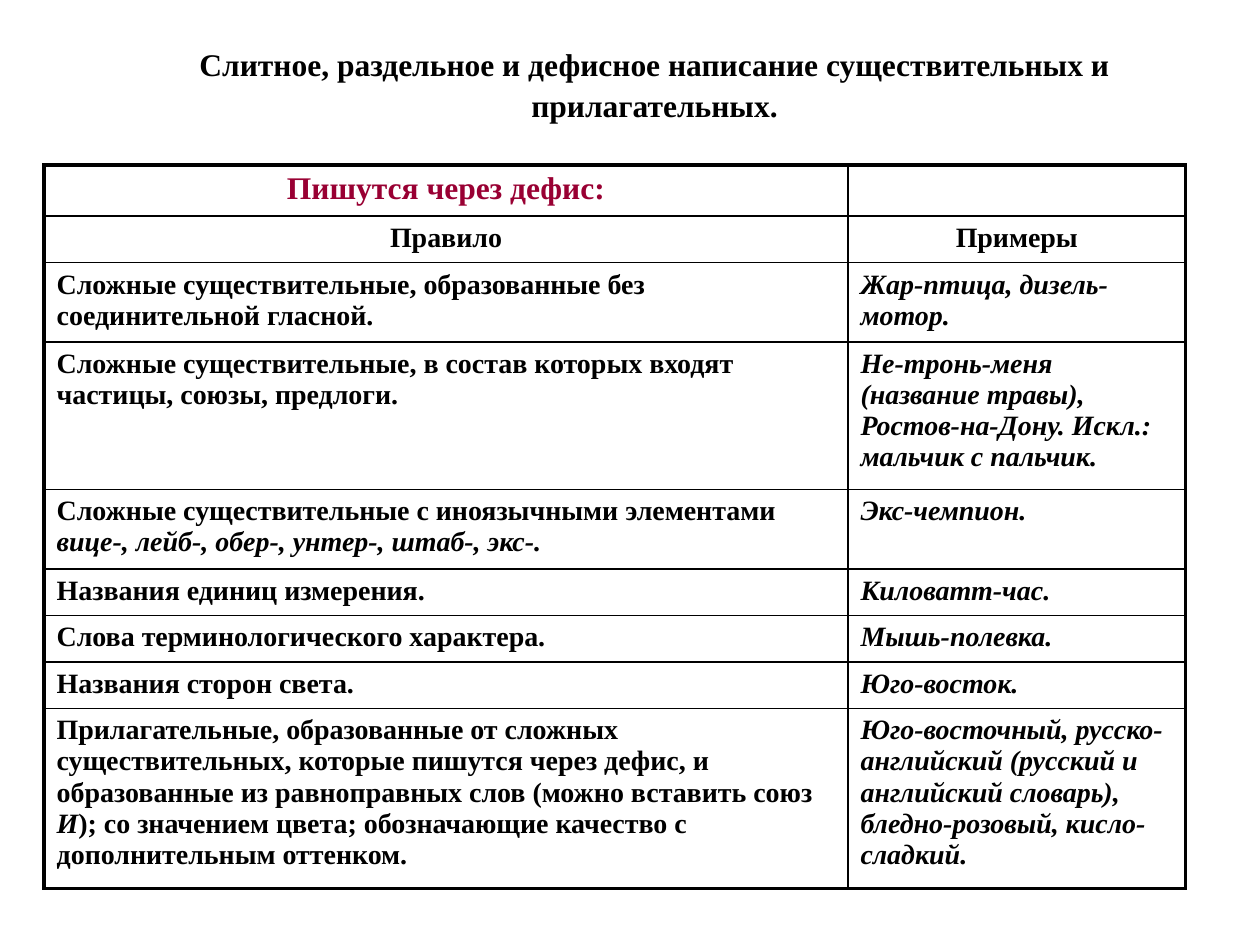
import pptx
import pptx.util
import pptx.dml.color
import pptx.enum.text
import pptx.oxml
import pptx.oxml.ns
from pptx.util import Inches

FONT = "Times New Roman"
COLORS = {"ink": "000000", "heading": "990033"}
TITLE = "Слитное, раздельное и дефисное написание существительных и прилагательных."
HEADING = "Пишутся через дефис:"
COLUMN_NAMES = ("Правило", "Примеры")

# Each rule is a list of (text, italic) spans, followed by its examples
RULES = [
    ([("Сложные существительные, образованные без соединительной гласной.", False)],
     "Жар-птица, дизель-мотор."),
    ([("Сложные существительные, в состав которых входят частицы, союзы, предлоги.", False)],
     "Не-тронь-меня (название травы), Ростов-на-Дону. Искл.: мальчик с пальчик."),
    ([("Сложные существительные с иноязычными элементами ", False),
      ("вице-, лейб-, обер-, унтер-, штаб-, экс-.", True)],
     "Экс-чемпион."),
    ([("Названия единиц измерения.", False)], "Киловатт-час."),
    ([("Слова терминологического характера.", False)], "Мышь-полевка."),
    ([("Названия сторон света.", False)], "Юго-восток."),
    ([("Прилагательные, образованные от сложных существительных, которые пишутся через "
       "дефис, и образованные из равноправных слов (можно вставить союз ", False),
      ("И", True),
      ("); со значением цвета; обозначающие качество с дополнительным оттенком.", False)],
     "Юго-восточный, русско-английский (русский и английский словарь), "
     "бледно-розовый, кисло-сладкий."),
]
COLUMN_WIDTHS = (6.38, 2.68)
ROW_HEIGHTS = (0.39, 0.37, 0.63, 1.17, 0.63, 0.37, 0.37, 0.37, 1.43)
OUTER_LINE, INNER_LINE = 2.25, 1


def write(para, spans, size=16, color="ink", centered=False):
    """Fill a paragraph with bold (text, italic) spans."""
    if centered:
        para.alignment = pptx.enum.text.PP_ALIGN.CENTER
    for text, italic in spans:
        span = para.add_run()
        span.text = text
        font = span.font
        font.name, font.size = FONT, pptx.util.Pt(size)
        font.bold, font.italic = True, italic
        font.color.rgb = pptx.dml.color.RGBColor.from_string(COLORS[color])


def set_borders(cell, widths):
    """Draw the cell's borders; widths maps side letters to points."""
    properties = cell._tc.get_or_add_tcPr()
    for position, (side, width) in enumerate(widths.items()):
        properties.insert(position, pptx.oxml.parse_xml(
            f'<a:ln{side} {pptx.oxml.ns.nsdecls("a")} w="{pptx.util.Pt(width)}">'
            f'<a:solidFill><a:srgbClr val="{COLORS["ink"]}"/></a:solidFill></a:ln{side}>'))


deck = pptx.Presentation()
deck.slide_width, deck.slide_height = Inches(10), Inches(7.5)
page = deck.slides.add_slide(deck.slide_layouts[6])

# Table of rules
rows = [([(HEADING, False)], []), tuple([(name, False)] for name in COLUMN_NAMES)]
rows += [(rule, [(examples, True)]) for rule, examples in RULES]
last_row, last_column = len(rows) - 1, len(COLUMN_WIDTHS) - 1
table = page.shapes.add_table(
    len(rows), len(COLUMN_WIDTHS), Inches(0.35), Inches(1.31),
    Inches(sum(COLUMN_WIDTHS)), Inches(sum(ROW_HEIGHTS))).table
table.first_row = table.horz_banding = False
for column, width in zip(table.columns, COLUMN_WIDTHS):
    column.width = Inches(width)

for r, row in enumerate(rows):
    table.rows[r].height = Inches(ROW_HEIGHTS[r])
    for c, spans in enumerate(row):
        cell = table.cell(r, c)
        cell.fill.background()
        write(cell.text_frame.paragraphs[0], spans, size=18 if r == 0 else 16,
              color="heading" if r == 0 else "ink", centered=r < 2)
        on_edge = {"L": c == 0, "R": c == last_column, "T": r == 0, "B": r == last_row}
        set_borders(cell, {side: OUTER_LINE if edge else INNER_LINE
                           for side, edge in on_edge.items()})

# Title
box = page.shapes.add_textbox(Inches(1.14), Inches(0.28), Inches(8.11), Inches(0.7))
box.text_frame.word_wrap = True
title = box.text_frame.paragraphs[0]
title.line_spacing = 1.09
write(title, [(TITLE, False)], size=18, centered=True)

deck.save("out.pptx")
